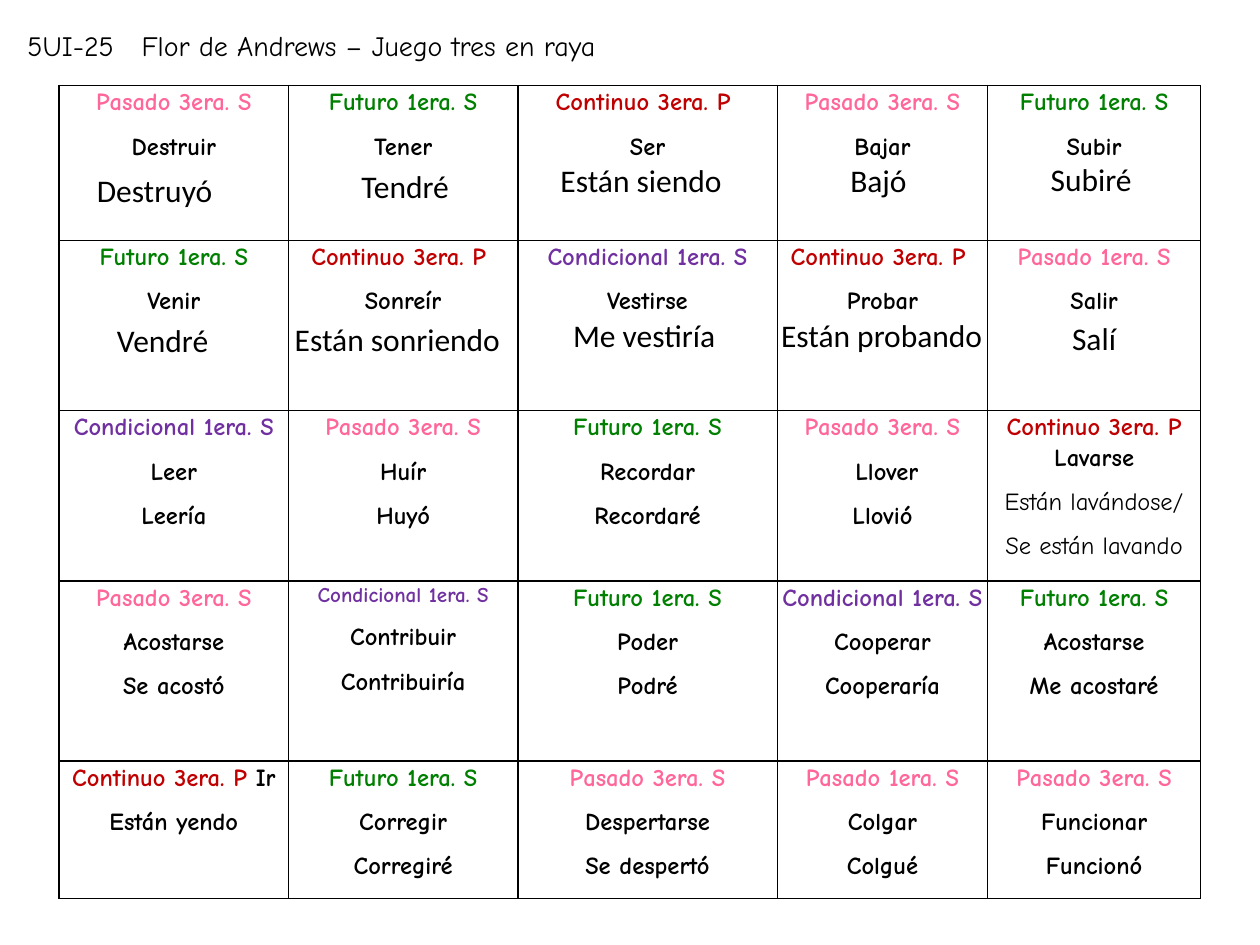
from enum import Enum
from typing import NamedTuple

from lxml.etree import SubElement
from pptx import Presentation
from pptx.dml.color import RGBColor
from pptx.enum.text import MSO_AUTO_SIZE as AutoSize, PP_ALIGN as Align
from pptx.oxml.ns import qn
from pptx.util import Inches, Pt

BLACK = RGBColor(0, 0, 0)
WHITE = RGBColor(255, 255, 255)
PINK = RGBColor(0xFF, 0x66, 0x99)
GREEN = RGBColor(0, 0x80, 0)
RED = RGBColor(0xC0, 0, 0)
PURPLE = RGBColor(0x70, 0x30, 0xA0)

COLUMN_WIDTHS = (1.82, 1.82, 2.06, 1.67, 1.69)
ROW_HEIGHTS = (1.23, 1.35, 1.35, 1.43, 1.09)

CELL_FORMAT = {
    "margin_left": Inches(0.04),
    "margin_right": Inches(0.04),
    "margin_top": Inches(0.01),
    "margin_bottom": 0,
}
LINE_FORMAT = {"alignment": Align.CENTER, "line_spacing": 1.07, "space_after": Pt(8)}
VERB_FORMAT = {"name": "Comic Neue", "size": Pt(14), "bold": True}
TITLE_FORMAT = {"name": "Comic Neue", "size": Pt(16)}
ANSWER_FORMAT = {"name": "Calibri", "size": Pt(18)}


class Tense(Enum):
    PAST_HE = ("Pasado 3era. S", PINK)
    PAST_I = ("Pasado 1era. S", PINK)
    FUTURE = ("Futuro 1era. S", GREEN)
    CONTINUOUS = ("Continuo 3era. P ", RED)
    CONDITIONAL = ("Condicional 1era. S", PURPLE)


class Square(NamedTuple):
    tense: Tense
    verb: str
    answers: tuple = ()
    verb_beside_tense: bool = False
    tense_size: int = 14
    answer_bold: bool = True


class Answer(NamedTuple):
    text: str
    left: float
    top: float
    width: float


PAST_HE, PAST_I, FUTURE, CONTINUOUS, CONDITIONAL = Tense

BOARD = (
    (
        Square(PAST_HE, "Destruir"),
        Square(FUTURE, "Tener"),
        Square(CONTINUOUS, "Ser"),
        Square(PAST_HE, "Bajar"),
        Square(FUTURE, "Subir"),
    ),
    (
        Square(FUTURE, "Venir"),
        Square(CONTINUOUS, "Sonreír"),
        Square(CONDITIONAL, "Vestirse"),
        Square(CONTINUOUS, "Probar"),
        Square(PAST_I, "Salir"),
    ),
    (
        Square(CONDITIONAL, "Leer", ("Leería",)),
        Square(PAST_HE, "Huír", ("Huyó",)),
        Square(FUTURE, "Recordar", ("Recordaré",)),
        Square(PAST_HE, " Llover", ("Llovió",)),
        Square(CONTINUOUS, "Lavarse", ("Están lavándose/", "Se están lavando"),
               verb_beside_tense=True, answer_bold=False),
    ),
    (
        Square(PAST_HE, "Acostarse", ("Se acostó",)),
        Square(CONDITIONAL, "Contribuir", ("Contribuiría",), tense_size=12),
        Square(FUTURE, "Poder", ("Podré",)),
        Square(CONDITIONAL, "Cooperar", ("Cooperaría",)),
        Square(FUTURE, "Acostarse", ("Me acostaré",)),
    ),
    (
        Square(CONTINUOUS, "Ir", ("Están yendo",), verb_beside_tense=True),
        Square(FUTURE, "Corregir", ("Corregiré",)),
        Square(PAST_HE, "Despertarse", ("Se despertó",)),
        Square(PAST_I, "Colgar", ("Colgué",)),
        Square(PAST_HE, "Funcionar", ("Funcionó",)),
    ),
)

FLOATING_ANSWERS = (
    Answer("Destruyó", 0.67, 1.31, 1.5),
    Answer("Tendré", 2.77, 1.28, 1.05),
    Answer("Están siendo", 4.35, 1.23, 1.5),
    Answer("Bajó", 6.65, 1.23, 1.13),
    Answer("Subiré", 8.24, 1.22, 0.89),
    Answer("Vendré", 0.83, 2.5, 1.18),
    Answer("Están sonriendo", 2.24, 2.49, 1.89),
    Answer("Me vestiría", 4.45, 2.46, 1.34),
    Answer("Están probando", 6.1, 2.46, 1.89),
    Answer("Salí", 8.41, 2.48, 1.89),
)


def apply_format(target, values: dict) -> None:
    for attribute, value in values.items():
        setattr(target, attribute, value)


def add_run(line, text: str, color: RGBColor, font_format: dict) -> None:
    run = line.add_run()
    run.text = text
    apply_format(run.font, font_format)
    run.font.color.rgb = color


def add_label(slide, label: Answer, height: float, font_format: dict) -> None:
    box = slide.shapes.add_textbox(
        Inches(label.left), Inches(label.top), Inches(label.width), Inches(height))
    frame = box.text_frame
    apply_format(frame, {"word_wrap": True, "auto_size": AutoSize.SHAPE_TO_FIT_TEXT})
    add_run(frame.paragraphs[0], label.text, BLACK, font_format)


def add_borders(cell) -> None:
    properties = cell._tc.get_or_add_tcPr()
    for side in ("lnL", "lnR", "lnT", "lnB"):
        border = SubElement(properties, qn(f"a:{side}"), w=str(Pt(1)))
        fill = SubElement(border, qn("a:solidFill"))
        SubElement(fill, qn("a:srgbClr"), val=str(BLACK))


def fill_square(cell, square: Square) -> None:
    apply_format(cell, CELL_FORMAT)
    add_borders(cell)
    cell.fill.solid()
    cell.fill.fore_color.rgb = WHITE

    tense_name, tense_color = square.tense.value
    tense_run = (tense_name, tense_color, VERB_FORMAT | {"size": Pt(square.tense_size)})
    verb_run = (square.verb, BLACK, VERB_FORMAT)
    lines = [[tense_run, verb_run]] if square.verb_beside_tense else [[tense_run], [verb_run]]
    answer_format = VERB_FORMAT | {"bold": square.answer_bold}
    lines += [[(answer, BLACK, answer_format)] for answer in square.answers]

    frame = cell.text_frame
    for index, runs in enumerate(lines):
        line = frame.add_paragraph() if index else frame.paragraphs[0]
        apply_format(line, LINE_FORMAT)
        for run in runs:
            add_run(line, *run)


def add_board(slide) -> None:
    board = slide.shapes.add_table(
        len(ROW_HEIGHTS), len(COLUMN_WIDTHS), Inches(0.47), Inches(0.68),
        Inches(sum(COLUMN_WIDTHS)), Inches(sum(ROW_HEIGHTS))).table
    apply_format(board, {"first_row": False, "horz_banding": False})
    for column, width in zip(board.columns, COLUMN_WIDTHS):
        column.width = Inches(width)
    for row, height, squares in zip(board.rows, ROW_HEIGHTS, BOARD):
        row.height = Inches(height)
        for cell, square in zip(row.cells, squares):
            fill_square(cell, square)


def main() -> None:
    deck = Presentation()
    apply_format(deck, {"slide_width": Inches(10), "slide_height": Inches(7.5)})
    slide = deck.slides.add_slide(deck.slide_layouts[6])
    title = Answer("5UI-25   Flor de Andrews – Juego tres en raya", 0.12, 0.18, 5.63)
    add_label(slide, title, 0.37, TITLE_FORMAT)
    add_board(slide)
    for answer in FLOATING_ANSWERS:
        add_label(slide, answer, 0.4, ANSWER_FORMAT)
    deck.save("out.pptx")


if __name__ == "__main__":
    main()
